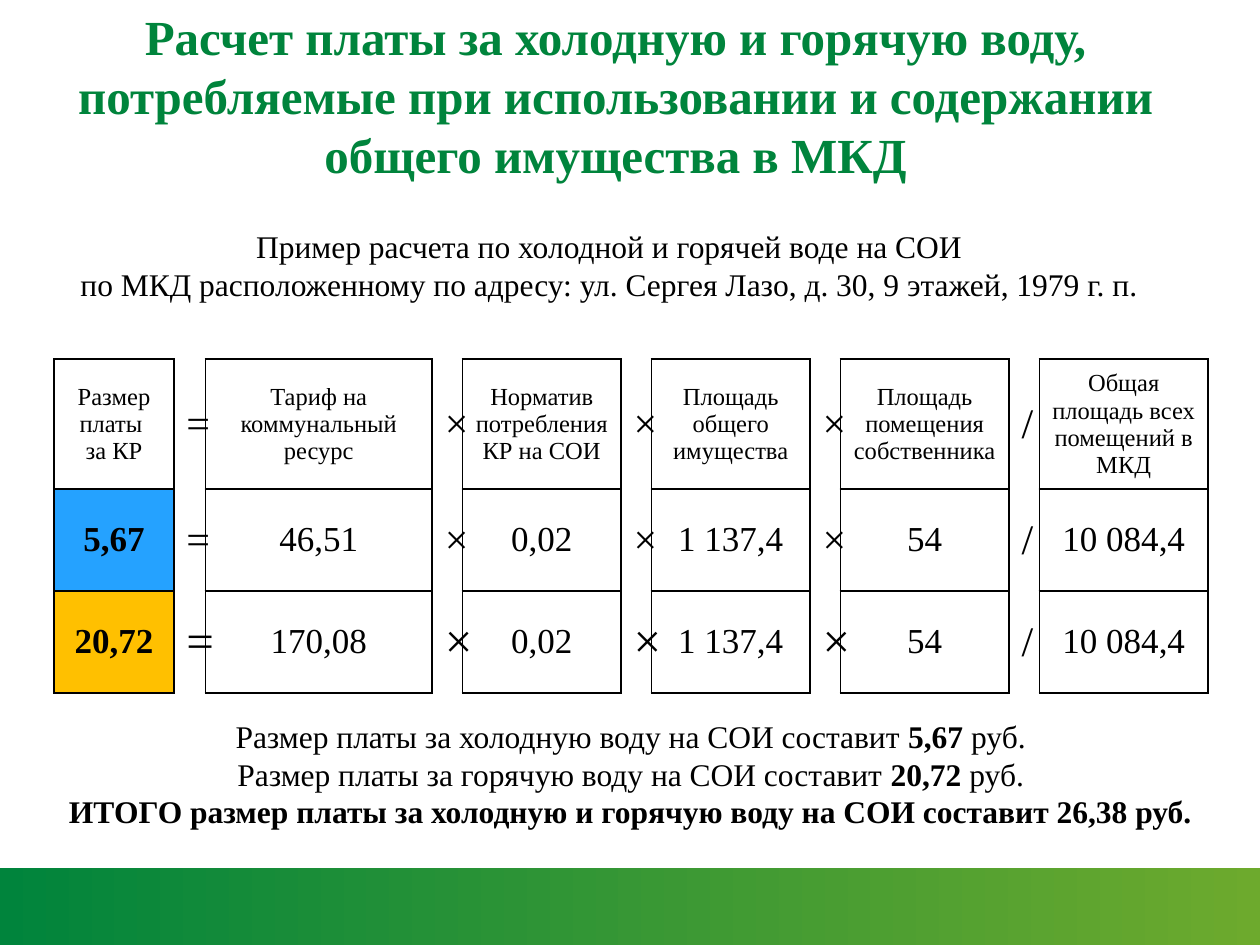
"""Build the slide on charges for cold and hot water in shared areas."""
import pptx
import pptx.dml.color
import pptx.enum.shapes
import pptx.enum.text
import pptx.oxml
import pptx.oxml.ns
import pptx.util
from pptx.util import Inches

HUES = {"green": "00843C", "lime": "6DAA2D", "black": "000000",
        "blue": "25A2FF", "gold": "FFC000"}
FONT = "Times New Roman"
CENTER = pptx.enum.text.PP_ALIGN.CENTER
MIDDLE = pptx.enum.text.MSO_ANCHOR.MIDDLE


def write(frame, paras, size, hue="black"):
    for num, runs in enumerate(paras):
        para = frame.paragraphs[0] if num == 0 else frame.add_paragraph()
        para.alignment = CENTER
        for text, bold in runs:
            for part, line in enumerate(text.split("\n")):
                if part:
                    para.add_line_break()
                run = para.add_run()
                run.text = line
                run.font.name = FONT
                run.font.size = pptx.util.Pt(size)
                run.font.bold = bold
                run.font.color.rgb = pptx.dml.color.RGBColor.from_string(HUES[hue])


def edge(cell, side, drawn):
    fill = (f'<a:solidFill><a:srgbClr val="{HUES["black"]}"/></a:solidFill>'
            if drawn else "<a:noFill/>")
    space = pptx.oxml.ns.nsdecls("a")
    cell._tc.get_or_add_tcPr().append(pptx.oxml.parse_xml(
        f'<a:ln{side} {space} w="12700">{fill}</a:ln{side}>'))


deck = pptx.Presentation()
deck.slide_width, deck.slide_height = Inches(10), Inches(7.5)
slide = deck.slides.add_slide(deck.slide_layouts[6])

texts = [
    ((0.2, 0, 9.37, 1.51), 28, "green", [
        [("Расчет платы за холодную и горячую воду, потребляемые при "
          "использовании и содержании общего имущества в МКД", True)]]),
    ((0.44, 1.75, 8.79, 0.71), 18, "black", [
        [("Пример расчета по холодной и горячей воде на СОИ", False)],
        [("по МКД расположенному по адресу: ул. Сергея Лазо, д. 30, "
          "9 этажей, 1979 г. п.", False)]]),
    ((0.44, 5.64, 9.13, 1.01), 18, "black", [
        [("Размер платы за холодную воду на СОИ составит ", False),
         ("5,67", True), (" руб.", False)],
        [("Размер платы за горячую воду на СОИ составит ", False),
         ("20,72 ", True), ("руб.", False)],
        [("ИТОГО размер платы за холодную и горячую воду на СОИ "
          "составит 26,38 руб.", True)]]),
]
for place, size, hue, paras in texts:
    box = slide.shapes.add_textbox(*map(Inches, place))
    box.text_frame.word_wrap = True
    if hue == "green":
        box.text_frame.vertical_anchor = MIDDLE
    write(box.text_frame, paras, size, hue)

band = slide.shapes.add_shape(pptx.enum.shapes.MSO_SHAPE.RECTANGLE,
                              0, Inches(6.89), Inches(10), Inches(0.62))
band.shadow.inherit = False
band.line.fill.background()
band.fill.gradient()
band.fill.gradient_angle = 0
for stop, hue, spot in zip(band.fill.gradient_stops, ("green", "lime"), (0, 1)):
    stop.color.rgb = pptx.dml.color.RGBColor.from_string(HUES[hue])
    stop.position = spot

widths = [0.95, 0.25, 1.8, 0.24, 1.26, 0.24, 1.26, 0.24, 1.34, 0.24, 1.34]
signs = ["=", "×", "×", "×", "/"]
tables = [
    (2.85, 1.03, 14, 24, None, [
        "Размер платы \nза КР", "Тариф на коммунальный ресурс",
        "Норматив потребления КР на СОИ", "Площадь общего имущества",
        "Площадь помещения собственника", "Общая площадь всех помещений в МКД"]),
    (3.88, 0.81, 20, 24, "blue",
     ["5,67", "46,51", "0,02", "1 137,4", "54", "10 084,4"]),
    (4.69, 0.81, 20, 28, "gold",
     ["20,72", "170,08", "0,02", "1 137,4", "54", "10 084,4"]),
]
for top, height, size, large, hue, terms in tables:
    table = slide.shapes.add_table(1, len(widths), Inches(0.43), Inches(top),
                                   Inches(sum(widths)), Inches(height)).table
    table.first_row = table.horz_banding = False
    for col, width in enumerate(widths):
        table.columns[col].width = Inches(width)
        cell = table.cell(0, col)
        cell.vertical_anchor = MIDDLE
        sign = col % 2 == 1
        text = signs[col // 2] if sign else terms[col // 2]
        points = size if not sign else 24 if text == "/" else large
        write(cell.text_frame, [[(text, col == 0 and hue is not None)]], points)
        for side in "LRTB":
            edge(cell, side, not sign or side in "LR")
        if col == 0 and hue:
            cell.fill.solid()
            cell.fill.fore_color.rgb = pptx.dml.color.RGBColor.from_string(HUES[hue])
        else:
            cell.fill.background()

deck.save("out.pptx")
